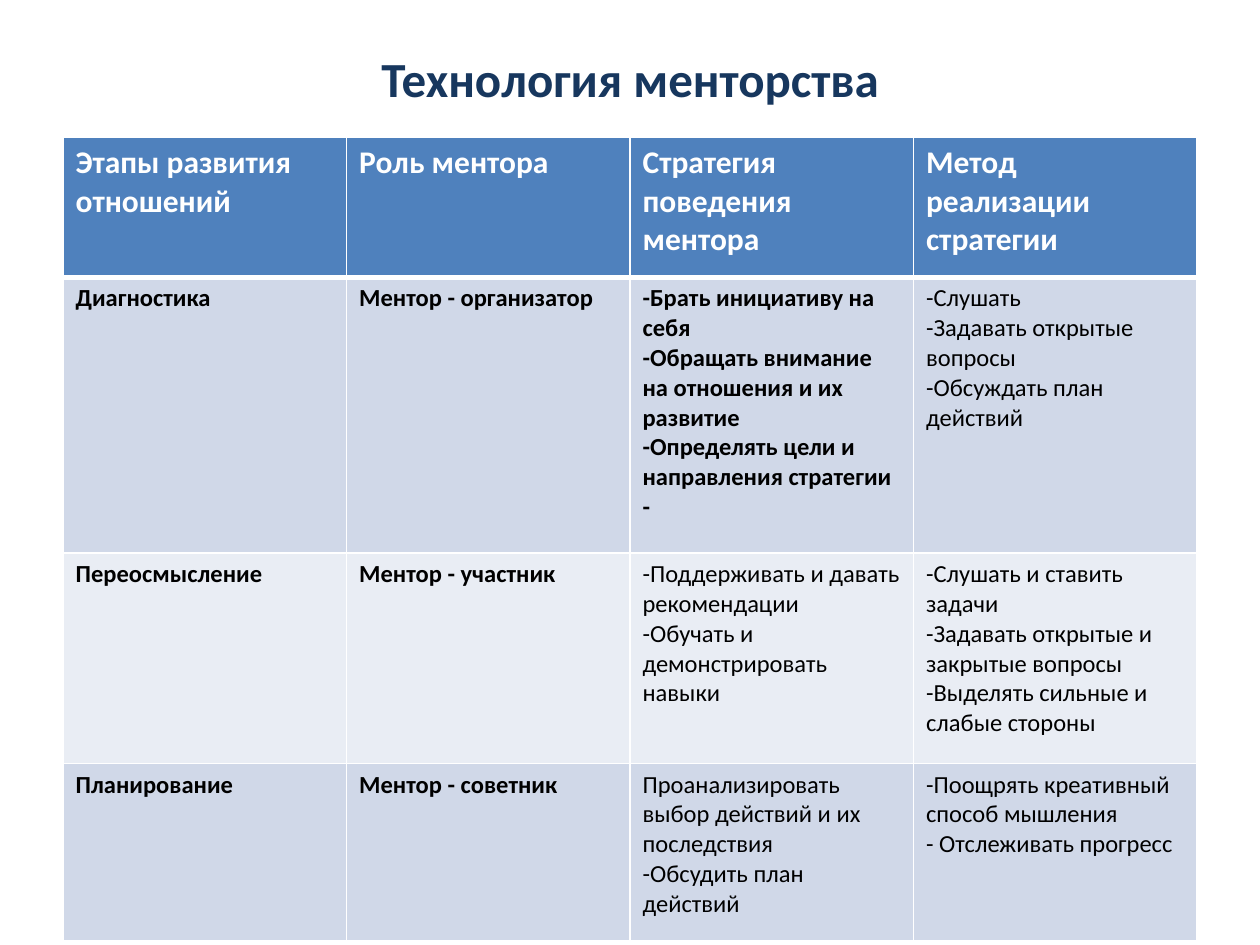
from lxml import etree
from pptx import Presentation
from pptx import util as u
from pptx.dml.color import RGBColor
from pptx.enum import text
from pptx.oxml import ns

FONT = "Calibri"
NAVY, BLUE, WHITE, BLACK = "17375E", "4F81BD", "FFFFFF", "000000"
BANDS = ["D0D8E8", "E9EDF4"]
ROW_HEIGHTS = [2.82, 5.56, 4.24, 3.58]
HEADERS = ["Этапы развития отношений", "Роль ментора",
           "Стратегия поведения ментора", "Метод реализации стратегии"]
STAGES = [
    ["Диагностика", "Ментор - организатор",
     "-Брать инициативу на себя\n"
     "-Обращать внимание на отношения и их развитие\n"
     "-Определять цели и направления стратегии\n-",
     "-Слушать\n-Задавать открытые вопросы\n-Обсуждать план действий"],
    ["Переосмысление", "Ментор - участник",
     "-Поддерживать и давать рекомендации\n-Обучать и демонстрировать навыки",
     "-Слушать и ставить задачи\n-Задавать открытые и закрытые вопросы\n"
     "-Выделять сильные и слабые стороны"],
    ["Планирование", "Ментор - советник",
     "Проанализировать выбор действий и их последствия\n-Обсудить план действий",
     "-Поощрять креативный способ мышления\n- Отслеживать прогресс"],
]
BOLD_STRATEGY = STAGES[0][2]


def color(value):
    return RGBColor.from_string(value)


def write_text(frame, content, size=14, fill=BLACK, bold=False,
               align=text.PP_ALIGN.LEFT):
    frame.word_wrap = True
    frame.text = content
    for paragraph in frame.paragraphs:
        paragraph.alignment = align
        for run in paragraph.runs:
            run.font.name = FONT
            run.font.size = u.Pt(size)
            run.font.bold = bold
            run.font.color.rgb = color(fill)


def set_borders(cell, top=1, bottom=1):
    properties = cell._tc.get_or_add_tcPr()
    widths = {"lnL": 1, "lnR": 1, "lnT": top, "lnB": bottom}
    for position, (side, width) in enumerate(widths.items()):
        line = etree.Element(ns.qn(f"a:{side}"), w=str(u.Pt(width)))
        fill = etree.SubElement(line, ns.qn("a:solidFill"))
        etree.SubElement(fill, ns.qn("a:srgbClr"), val=WHITE)
        properties.insert(position, line)


def fill_cell(cell, content, background, top=1, bottom=1, **text_format):
    cell.fill.solid()
    cell.fill.fore_color.rgb = color(background)
    set_borders(cell, top, bottom)
    write_text(cell.text_frame, content, **text_format)


def add_title(slide, left, top, width, height):
    shape = slide.shapes.add_textbox(u.Cm(left), u.Cm(top), u.Cm(width), u.Cm(height))
    shape.text_frame.vertical_anchor = text.MSO_ANCHOR.MIDDLE
    write_text(shape.text_frame, "Технология менторства", size=28, fill=NAVY,
               bold=True, align=text.PP_ALIGN.CENTER)


def add_stages_table(slide, left, top, width, height):
    table = slide.shapes.add_table(
        len(ROW_HEIGHTS), len(HEADERS),
        u.Cm(left), u.Cm(top), u.Cm(width), u.Cm(height)).table
    for row, row_height in zip(table.rows, ROW_HEIGHTS):
        row.height = u.Cm(row_height)
    for column, header in enumerate(HEADERS):
        fill_cell(table.cell(0, column), header, BLUE, bottom=3,
                  size=18, fill=WHITE, bold=True)
    for row, stage in enumerate(STAGES, start=1):
        for column, content in enumerate(stage):
            fill_cell(table.cell(row, column), content, BANDS[(row - 1) % 2],
                      top=3 if row == 1 else 1,
                      bold=column < 2 or content == BOLD_STRATEGY)


def main():
    presentation = Presentation()
    presentation.slide_width, presentation.slide_height = u.Cm(25.4), u.Cm(19.05)
    slide = presentation.slides.add_slide(presentation.slide_layouts[6])
    add_title(slide, 1.27, 0.76, 22.86, 1.63)
    add_stages_table(slide, 1.27, 2.77, 22.86, sum(ROW_HEIGHTS))
    presentation.save("out.pptx")


if __name__ == "__main__":
    main()
